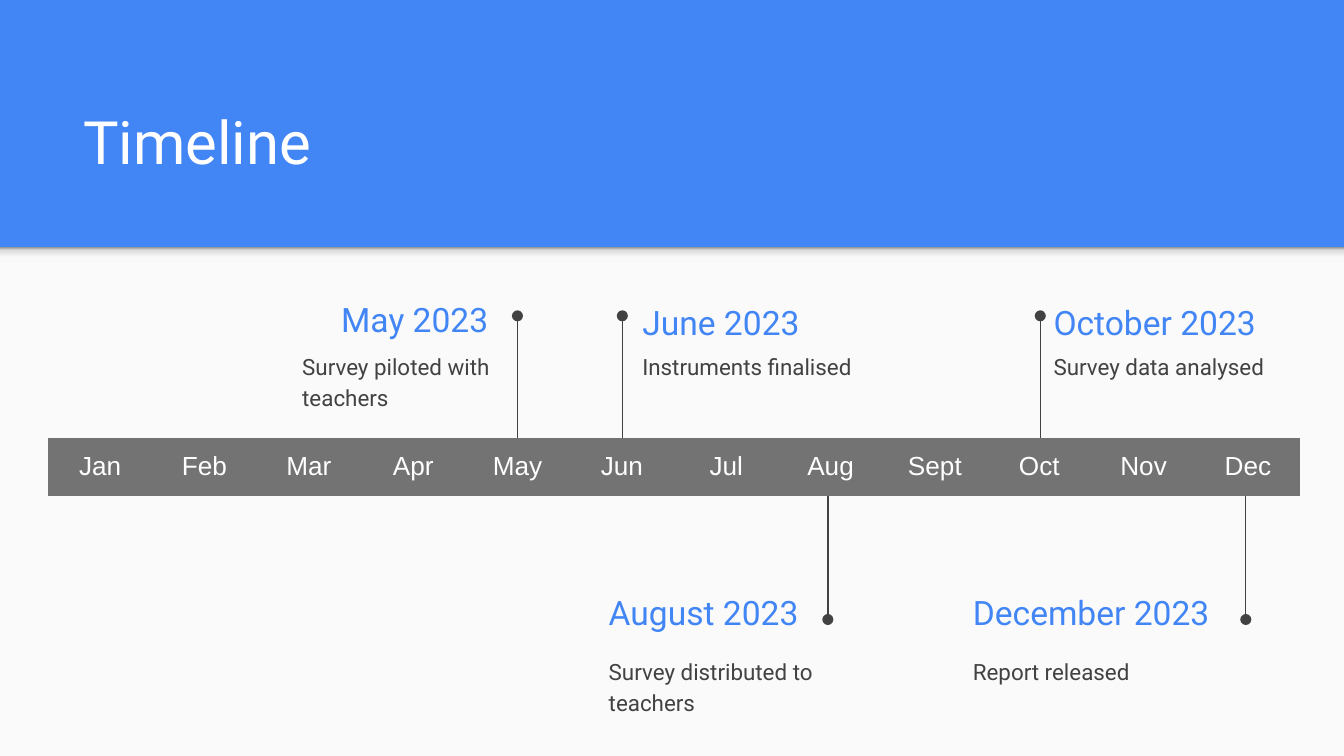
from copy import deepcopy

from lxml import etree
from pptx import Presentation
from pptx import util as u
from pptx.dml.color import RGBColor
from pptx.enum import shapes, text
from pptx.oxml import ns

BLUE = RGBColor(0x42, 0x85, 0xF4)
PAPER = RGBColor(0xFA, 0xFA, 0xFA)
WHITE = RGBColor(0xFF, 0xFF, 0xFF)
INK = RGBColor(0x42, 0x42, 0x42)
BAR = RGBColor(0x73, 0x73, 0x73)
SHADE_LIGHT = RGBColor(0xF9, 0xF9, 0xF9)
SHADE_MID = RGBColor(0xDE, 0xDE, 0xDE)
SHADE_DARK = RGBColor(0x99, 0x99, 0x99)

SHADE_STOPS = [(0, SHADE_LIGHT), (0.36, SHADE_LIGHT), (0.8, SHADE_MID), (1, SHADE_DARK)]
NO_STYLE = "{2D5ABB26-0587-4C30-8999-92F81FD0307C}"
WIDTH, HEIGHT = 720, 405
PANEL_TOP = 132.5
BAR_LEFT, BAR_TOP, BAR_HEIGHT = 25.7, 234.7, 30.24
MONTH_WIDTH = 55.9
INSET = 7.2
EVENT_WIDTH = 142.6
ABOVE = (234.7, 169.2)
BELOW = (265.7, 331.9)

MONTHS = "Jan Feb Mar Apr May Jun Jul Aug Sept Oct Nov Dec".split()
EVENTS = [
    ("May 2023", (175.7, 155.5), "Survey piloted with teachers", (154.8, 180), 277.2, ABOVE),
    ("June 2023", (337, 157), "Instruments finalised", (337, 180), 333.4, ABOVE),
    ("August 2023", (319, 312.5), "Survey distributed to teachers", (319, 343.4), 443.5, BELOW),
    ("October 2023", (557.3, 157), "Survey data analysed", (557.3, 180), 557.3, ABOVE),
    ("December 2023", (514.1, 312.5), "Report released", (514.1, 343.4), 667.4, BELOW),
]


def add_band(slide, top, height):
    band = slide.shapes.add_shape(
        shapes.MSO_SHAPE.RECTANGLE, 0, u.Pt(top), u.Pt(WIDTH), u.Pt(height))
    band.shadow.inherit = False
    band.line.fill.background()
    return band


def add_panel(slide):
    panel = add_band(slide, PANEL_TOP, HEIGHT - PANEL_TOP)
    panel.fill.solid()
    panel.fill.fore_color.rgb = PAPER


def add_shade(slide):
    shade = add_band(slide, PANEL_TOP, 8.6)
    shade.fill.gradient()
    shade.fill.gradient_angle = 90
    stop_list = shade._element.spPr.find(ns.qn("a:gradFill")).find(ns.qn("a:gsLst"))
    for _ in range(len(SHADE_STOPS) - len(stop_list)):
        stop_list.append(deepcopy(stop_list[0]))
    for stop, (position, color) in zip(shade.fill.gradient_stops, SHADE_STOPS):
        stop.position = position
        stop.color.rgb = color


def style_font(paragraph, name, size, color):
    paragraph.font.name = name
    paragraph.font.size = u.Pt(size)
    paragraph.font.color.rgb = color


def add_text(slide, wording, position, size, font_size, color,
             anchor=text.MSO_ANCHOR.TOP, inset_top=INSET):
    box = slide.shapes.add_textbox(*map(u.Pt, position + size))
    frame = box.text_frame
    frame.word_wrap = True
    frame.vertical_anchor = anchor
    frame.margin_left = frame.margin_right = frame.margin_bottom = u.Pt(INSET)
    frame.margin_top = u.Pt(inset_top)
    paragraph = frame.paragraphs[0]
    paragraph.text = wording
    style_font(paragraph, "Roboto", font_size, color)
    return paragraph


def add_marker(slide, x, start, end):
    marker = slide.shapes.add_connector(
        shapes.MSO_CONNECTOR.STRAIGHT, u.Pt(x), u.Pt(start), u.Pt(x), u.Pt(end))
    marker.line.color.rgb = INK
    marker.line.width = u.Pt(0.75)
    line = marker.line._get_or_add_ln()
    etree.SubElement(line, ns.qn("a:tailEnd"), type="oval")
    etree.SubElement(marker._element.spPr, ns.qn("a:effectLst"))


def add_event(slide, heading, heading_position, detail, detail_position, x, span):
    add_text(slide, heading, heading_position, (EVENT_WIDTH, 31), 18, BLUE,
             text.MSO_ANCHOR.MIDDLE)
    paragraph = add_text(slide, detail, detail_position, (EVENT_WIDTH, 45.4), 12, INK)
    paragraph.line_spacing = 1.15
    add_marker(slide, x, *span)


def add_month_bar(slide):
    frame = slide.shapes.add_table(
        1, len(MONTHS), u.Pt(BAR_LEFT), u.Pt(BAR_TOP),
        u.Pt(MONTH_WIDTH * len(MONTHS)), u.Pt(BAR_HEIGHT))
    table = frame.table
    table.first_row = table.horz_banding = False
    table._tbl.tblPr.find(ns.qn("a:tableStyleId")).text = NO_STYLE
    for column, month in enumerate(MONTHS):
        table.columns[column].width = u.Pt(MONTH_WIDTH)
        cell = table.cell(0, column)
        cell.fill.solid()
        cell.fill.fore_color.rgb = BAR
        cell.margin_left = cell.margin_right = u.Pt(INSET)
        cell.margin_top = cell.margin_bottom = u.Pt(INSET)
        paragraph = cell.text_frame.paragraphs[0]
        paragraph.text = month
        paragraph.alignment = text.PP_ALIGN.CENTER
        style_font(paragraph, "Arial", 14, WHITE)


def main():
    presentation = Presentation()
    presentation.slide_width = u.Pt(WIDTH)
    presentation.slide_height = u.Pt(HEIGHT)
    slide = presentation.slides.add_slide(presentation.slide_layouts[6])
    slide.background.fill.solid()
    slide.background.fill.fore_color.rgb = BLUE
    add_panel(slide)
    add_shade(slide)
    add_text(slide, "Timeline", (37.4, 56), (647.3, 63), 32, WHITE, inset_top=0)
    add_month_bar(slide)
    for event in EVENTS:
        add_event(slide, *event)
    presentation.save("out.pptx")


if __name__ == "__main__":
    main()
